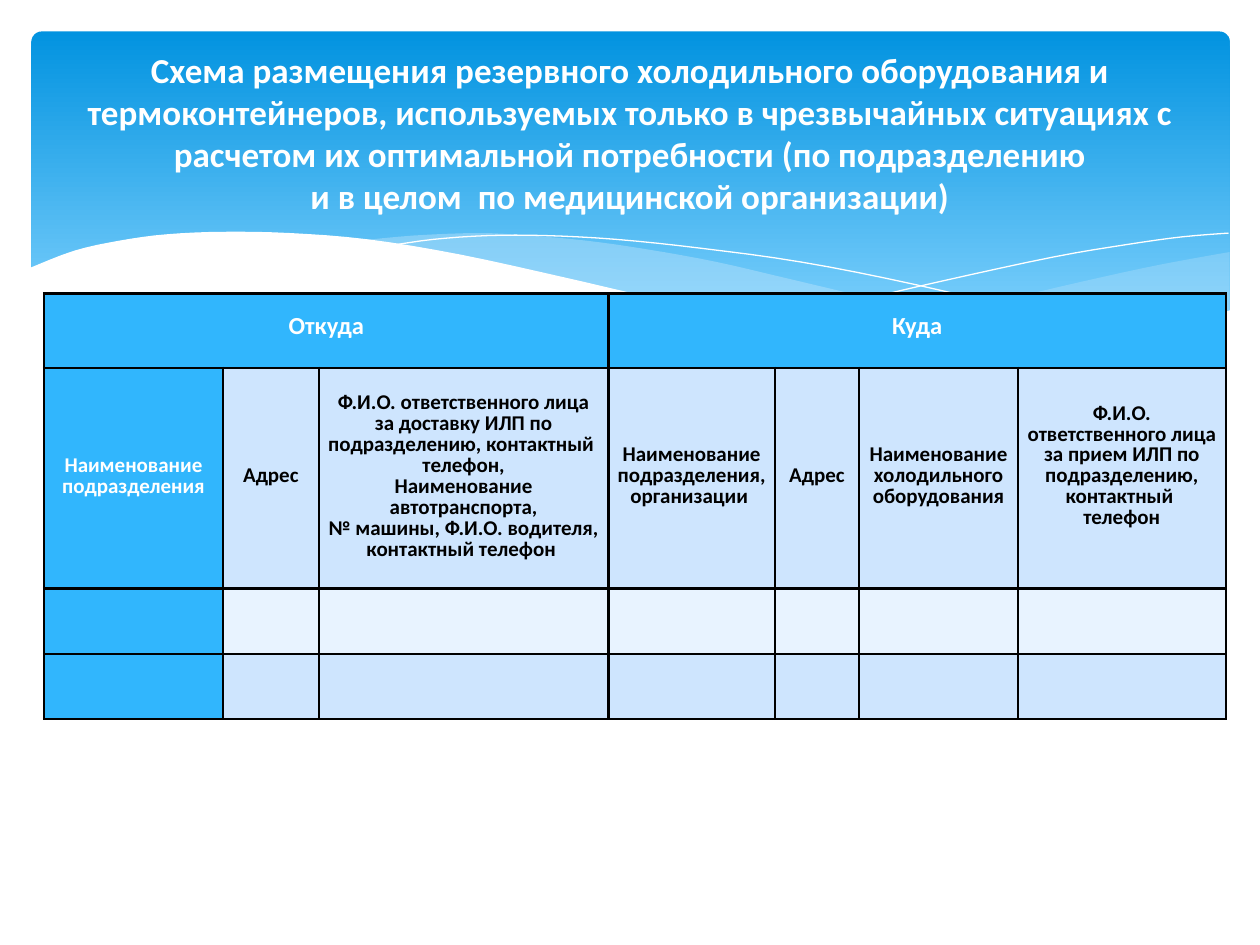
import pptx
import pptx.util
import pptx.dml.color
import pptx.enum.dml
import pptx.enum.shapes
import pptx.enum.text
import pptx.oxml
import pptx.oxml.ns
import lxml.etree
from pptx.util import Inches, Pt

COLORS = {"white": "FFFFFF", "black": "000000", "sky_top": "0293E0", "sky_bottom": "83D3FE",
          "wave": "C6E7FC", "accent": "31B6FD", "band": "CEE5FE", "pale": "E8F3FF"}
FONT = "Calibri"

TITLE = ("Схема размещения резервного холодильного оборудования и термоконтейнеров, "
         "используемых только в чрезвычайных ситуациях с расчетом их оптимальной потребности "
         "(по подразделению\nи в целом  по медицинской организации)")

# Column on which each group starts and ends, with its heading
GROUPS = [(0, 2, "Откуда"), (3, 6, "Куда")]
HEADINGS = [
    ["Наименование", "подразделения"],
    ["Адрес"],
    ["Ф.И.О. ответственного лица за доставку ИЛП по подразделению, контактный  телефон,",
     "Наименование автотранспорта,",
     "№ машины, Ф.И.О. водителя, контактный телефон "],
    ["Наименование", "подразделения, организации "],
    ["Адрес"],
    ["Наименование холодильного оборудования"],
    ["Ф.И.О. ответственного лица за прием ИЛП по подразделению, контактный  телефон"],
]
COLUMN_WIDTHS = [1.42, 0.76, 2.3, 1.32, 0.67, 1.26, 1.65]
ROW_HEIGHTS = [0.59, 1.75, 0.52, 0.52]
ROW_FILLS = ["accent", "band", "pale", "band"]

# Each wave is a list of curved edges; consecutive edges are joined by straight lines
WAVES = [
    {"edges": [[(9.76, 2), (9.21, 2.1), (8.61, 2.23), (7.79, 2.42), (7.06, 2.57), (6.61, 2.65)],
               [(6.61, 2.65), (7.05, 2.71), (7.57, 2.76), (8.03, 2.78), (8.54, 2.76),
                (9.05, 2.69), (9.42, 2.59), (9.76, 2.47)]],
     "fill": "wave", "opacity": 29},
    {"edges": [[(8.93, 2.73), (8.37, 2.65), (7.75, 2.54), (7.06, 2.4), (6.29, 2.22), (5.69, 2.08),
                (5.14, 1.98), (4.65, 1.91), (4.2, 1.87), (3.8, 1.85), (3.28, 1.87), (2.86, 1.91)],
               [(2.86, 1.91), (3.42, 1.99), (4.04, 2.11), (4.49, 2.22), (5.3, 2.4), (6.01, 2.55),
                (6.65, 2.66), (7.22, 2.74), (7.73, 2.77), (8.18, 2.78), (8.57, 2.77),
                (8.93, 2.73)]],
     "fill": "wave", "opacity": 40},
    {"edges": [[(3.09, 1.95), (3.44, 1.9), (3.87, 1.87), (4.33, 1.87), (4.89, 1.9), (5.56, 1.97),
                (6.36, 2.08), (7.27, 2.26), (8.31, 2.51), (9.07, 2.72)]]},
    {"edges": [[(6.13, 2.57), (6.72, 2.41), (7.48, 2.23), (8.36, 2.04), (8.95, 1.94),
                (9.38, 1.88), (9.75, 1.85)]]},
    {"edges": [[(9.77, 2.46), (9.3, 2.62), (8.75, 2.73), (8.09, 2.77), (7.44, 2.74), (6.68, 2.65),
                (5.79, 2.5), (5.03, 2.33), (4.47, 2.2), (3.65, 2.02), (2.92, 1.9), (2.3, 1.85),
                (1.77, 1.84), (1.32, 1.86), (0.95, 1.91), (0.59, 1.99), (0.23, 2.13)],
               [(0.23, 3.29), (9.77, 3.29)]],
     "fill": "white", "opacity": 100},
]


def rgb(name):
    return pptx.dml.color.RGBColor.from_string(COLORS[name])


def curve(points, steps=4):
    """Points of a Catmull-Rom curve that passes through the given points."""
    padded = [points[0], *points, points[-1]]
    smooth = [points[0]]
    for before, start, end, after in zip(padded, padded[1:], padded[2:], padded[3:]):
        for t in (step / steps for step in range(1, steps + 1)):
            smooth.append(tuple(
                (2 * b + (c - a) * t + (2 * a - 5 * b + 4 * c - d) * t ** 2
                 + (3 * b - a - 3 * c + d) * t ** 3) / 2
                for a, b, c, d in zip(before, start, end, after)))
    return smooth


def add_wave(shapes, edges, fill=None, opacity=100):
    outline = [(Inches(x), Inches(y)) for edge in edges for x, y in curve(edge)]
    builder = shapes.build_freeform(*outline[0])
    builder.add_line_segments(outline[1:], close=fill is not None)
    wave = builder.convert_to_shape()
    wave.shadow.inherit = False
    if fill is None:
        wave.fill.background()
        wave.line.color.rgb = rgb("white")
        wave.line.width = Pt(0)
        return
    wave.line.fill.background()
    wave.fill.solid()
    wave.fill.fore_color.rgb = rgb(fill)
    if opacity < 100:
        color = wave._element.spPr.find(".//" + pptx.oxml.ns.qn("a:srgbClr"))
        lxml.etree.SubElement(color, pptx.oxml.ns.qn("a:alpha"), val=str(opacity * 1000))


def add_sky(shapes):
    sky = shapes.add_shape(pptx.enum.shapes.MSO_SHAPE.ROUNDED_RECTANGLE,
                           Inches(0.25), Inches(0.25), Inches(9.51), Inches(2.7))
    sky.adjustments[0] = 0.03
    sky.shadow.inherit = False
    sky.line.fill.background()
    sky.fill.gradient()
    sky.fill.gradient_angle = 270
    stops = [(0, "sky_top"), (0.9, "sky_bottom")]
    for stop, (position, color) in zip(sky.fill.gradient_stops, stops):
        stop.position = position
        stop.color.rgb = rgb(color)


def write(paragraph, text, size, color):
    paragraph.text = text
    paragraph.alignment = pptx.enum.text.PP_ALIGN.CENTER
    for run in paragraph.runs:
        for name, value in {"name": FONT, "size": Pt(size), "bold": True}.items():
            setattr(run.font, name, value)
        run.font.color.rgb = rgb(color)


def fill_cell(cell, lines, size, color):
    for number, line in enumerate(lines):
        frame = cell.text_frame
        paragraph = frame.add_paragraph() if number else frame.paragraphs[0]
        write(paragraph, line, size, color)
        paragraph.line_spacing = Pt(12)


def add_borders(cell):
    properties = cell._tc.get_or_add_tcPr()
    for position, side in enumerate(("lnL", "lnR", "lnT", "lnB")):
        properties.insert(position, pptx.oxml.parse_xml(
            f'<a:{side} {pptx.oxml.ns.nsdecls("a")} w="{Pt(1.5)}"><a:solidFill>'
            f'<a:srgbClr val="{COLORS["black"]}"/></a:solidFill></a:{side}>'))


def add_transfer_table(shapes):
    table = shapes.add_table(len(ROW_HEIGHTS), len(COLUMN_WIDTHS), Inches(0.35), Inches(2.33),
                             Inches(sum(COLUMN_WIDTHS)), Inches(sum(ROW_HEIGHTS))).table
    table.first_row = table.horz_banding = False
    for column, width in zip(table.columns, COLUMN_WIDTHS):
        column.width = Inches(width)
    cell_format = {"margin_left": Inches(0.06), "margin_right": Inches(0.06),
                   "margin_top": 0, "margin_bottom": 0,
                   "vertical_anchor": pptx.enum.text.MSO_ANCHOR.MIDDLE}
    for row, height, row_fill in zip(table.rows, ROW_HEIGHTS, ROW_FILLS):
        row.height = Inches(height)
        for number, cell in enumerate(row.cells):
            for name, value in cell_format.items():
                setattr(cell, name, value)
            add_borders(cell)
            cell.fill.solid()
            cell.fill.fore_color.rgb = rgb(row_fill if number else "accent")
    for first, last, heading in GROUPS:
        table.cell(0, first).merge(table.cell(0, last))
        fill_cell(table.cell(0, first), [heading], 14, "white")
    for number, lines in enumerate(HEADINGS):
        fill_cell(table.cell(1, number), lines, 12, "black" if number else "white")
    table.cell(1, len(HEADINGS) - 1).margin_bottom = Pt(12)


def place_title(slide):
    title = slide.shapes.title
    box = {"left": 0.5, "top": 0.37, "width": 9, "height": 1.37}
    for name, value in box.items():
        setattr(title, name, Inches(value))
    title.text_frame.vertical_anchor = pptx.enum.text.MSO_ANCHOR.MIDDLE
    title.text_frame.word_wrap = True
    write(title.text_frame.paragraphs[0], TITLE, 20, "white")
    slide.shapes._spTree.append(title._element)  # bring to front


def main():
    presentation = pptx.Presentation()
    presentation.slide_width, presentation.slide_height = Inches(10), Inches(7.5)
    slide = presentation.slides.add_slide(presentation.slide_layouts[5])
    add_sky(slide.shapes)
    for wave in WAVES:
        add_wave(slide.shapes, **wave)
    add_transfer_table(slide.shapes)
    place_title(slide)
    presentation.save("out.pptx")


if __name__ == "__main__":
    main()
